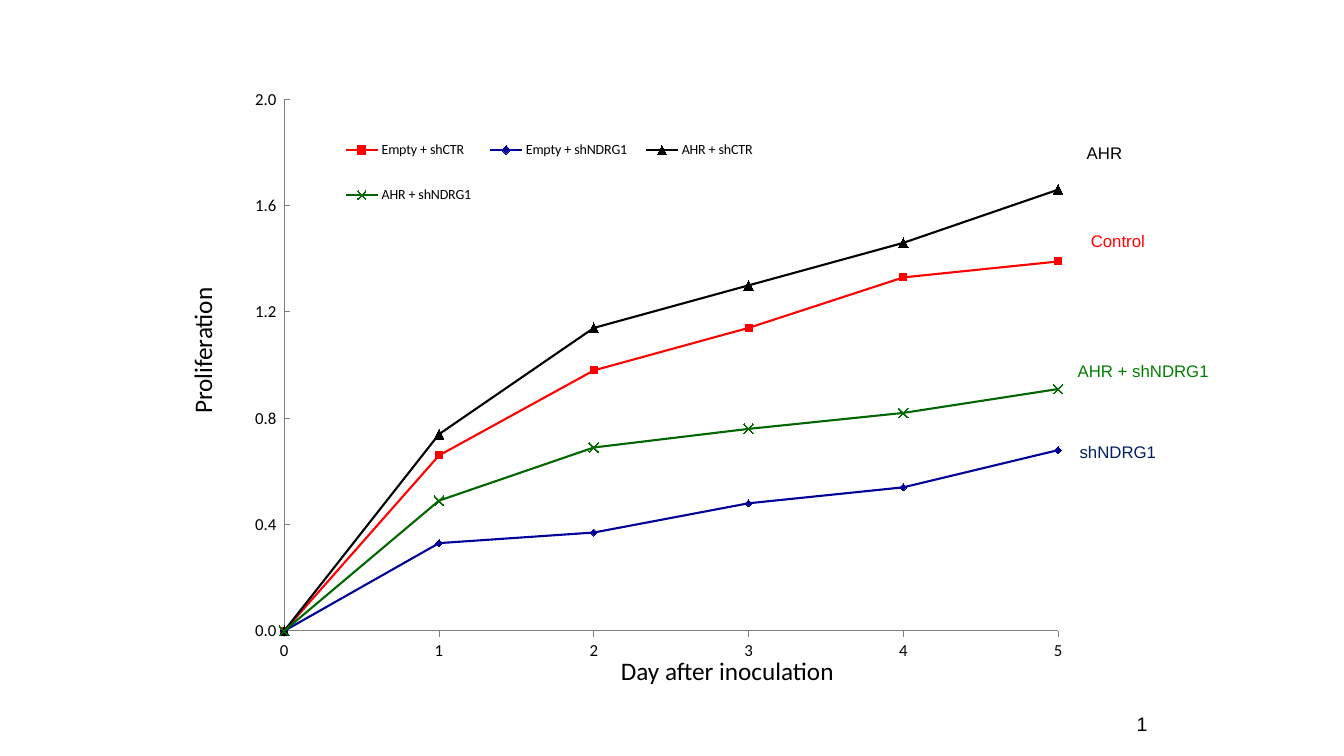
from dataclasses import dataclass

from pptx import Presentation
from pptx.chart.chart import Chart
from pptx.chart.data import CategoryChartData
from pptx.dml.color import RGBColor
from pptx.enum.chart import (XL_CHART_TYPE, XL_LEGEND_POSITION,
                             XL_MARKER_STYLE, XL_TICK_MARK)
from pptx.enum.text import MSO_ANCHOR, MSO_AUTO_SIZE, PP_ALIGN
from pptx.oxml import parse_xml
from pptx.oxml.ns import nsdecls, qn
from pptx.util import Inches, Pt

BLACK = RGBColor(0x00, 0x00, 0x00)
RED = RGBColor(0xFF, 0x00, 0x00)
BLUE = RGBColor(0x00, 0x00, 0x99)
NAVY = RGBColor(0x00, 0x20, 0x60)
DARK_GREEN = RGBColor(0x00, 0x66, 0x00)
GREEN = RGBColor(0x00, 0x80, 0x00)
GRAY = RGBColor(0x80, 0x80, 0x80)


@dataclass
class Curve:
    name: str
    values: tuple[float, ...]
    color: RGBColor
    marker: XL_MARKER_STYLE
    marker_size: int


@dataclass
class Label:
    text: str
    left: float
    top: float
    width: float
    height: float = 0.3
    size: int = 12
    color: RGBColor = BLACK
    font: str = "Arial"
    rotation: int = 0
    align: PP_ALIGN = PP_ALIGN.LEFT
    anchor: MSO_ANCHOR = MSO_ANCHOR.TOP
    fit: MSO_AUTO_SIZE = MSO_AUTO_SIZE.SHAPE_TO_FIT_TEXT


DAYS = [str(day) for day in range(6)]
CURVES = [
    Curve("Empty + shCTR", (0, 0.66, 0.98, 1.14, 1.33, 1.39), RED,
          XL_MARKER_STYLE.SQUARE, 5),
    Curve("Empty + shNDRG1", (0, 0.33, 0.37, 0.48, 0.54, 0.68), BLUE,
          XL_MARKER_STYLE.DIAMOND, 5),
    Curve("AHR + shCTR", (0, 0.74, 1.14, 1.3, 1.46, 1.66), BLACK,
          XL_MARKER_STYLE.TRIANGLE, 7),
    Curve("AHR + shNDRG1", (0, 0.49, 0.69, 0.76, 0.82, 0.91), DARK_GREEN,
          XL_MARKER_STYLE.X, 7),
]
LABELS = [
    Label("Proliferation", 0.73, 2.73, 2.55, 0.4, 18, font="Calibri", rotation=270),
    Label("Day after inoculation", 6.06, 6.45, 4.36, 0.4, 18, font="Calibri"),
    Label("shNDRG1", 10.61, 4.33, 1.76, color=NAVY),
    Label("AHR", 10.68, 1.37, 1.01),
    Label("AHR + shNDRG1", 10.59, 3.53, 2.75, color=GREEN),
    Label("Control", 10.72, 2.24, 1.35, color=RED),
    Label("1", 9.15, 6.98, 2.33, 0.4, 14, align=PP_ALIGN.RIGHT,
          anchor=MSO_ANCHOR.MIDDLE, fit=MSO_AUTO_SIZE.NONE),
]


def set_layout(parent, index: int, x: float, y: float, w: float, h: float,
               inner: bool = False) -> None:
    """Place a chart part by fractions of the chart's size."""
    for old in parent.findall(qn("c:layout")):
        parent.remove(old)
    target = '<c:layoutTarget val="inner"/>' if inner else ""
    parent.insert(index, parse_xml(
        f'<c:layout {nsdecls("c")}><c:manualLayout>{target}'
        '<c:xMode val="edge"/><c:yMode val="edge"/>'
        f'<c:x val="{x}"/><c:y val="{y}"/><c:w val="{w}"/><c:h val="{h}"/>'
        '</c:manualLayout></c:layout>'))


def format_axes(chart: Chart) -> None:
    days, growth = chart.category_axis, chart.value_axis
    for axis, tick in ((days, XL_TICK_MARK.OUTSIDE), (growth, XL_TICK_MARK.INSIDE)):
        axis.has_major_gridlines = False
        axis.major_tick_mark = tick
        axis.minor_tick_mark = XL_TICK_MARK.NONE
        axis.tick_labels.font.size = Pt(12)
        axis.format.line.color.rgb = GRAY
        axis.format.line.width = Pt(0.75)
    growth.minimum_scale = 0
    growth.maximum_scale = 2
    growth.major_unit = 0.4
    growth.tick_labels.number_format = r"#,##0.0_);[Red]\(#,##0.0\)"
    growth.tick_labels.number_format_is_linked = False
    # Day 0 sits on the value axis
    for old in growth._element.findall(qn("c:crossBetween")):
        growth._element.remove(old)
    growth._element.find(qn("c:majorUnit")).addprevious(
        parse_xml(f'<c:crossBetween {nsdecls("c")} val="midCat"/>'))


def add_growth_chart(s) -> None:
    data = CategoryChartData()
    data.categories = DAYS
    for curve in CURVES:
        data.add_series(curve.name, curve.values)
    chart = s.shapes.add_chart(
        XL_CHART_TYPE.LINE_MARKERS, Inches(0.08), Inches(0.59),
        Inches(12.34), Inches(6.6), data).chart
    chart.has_title = False
    chart.font.name = "Calibri"
    chart.font.size = Pt(10)
    chart.font.color.rgb = BLACK
    chart.plots[0].vary_by_categories = False
    format_axes(chart)

    # Curves
    for curve, series in zip(CURVES, chart.plots[0].series):
        series.smooth = False
        series.format.line.color.rgb = curve.color
        series.format.line.width = Pt(1.5)
        marker = series.marker
        marker.style = curve.marker
        marker.size = curve.marker_size
        marker.format.line.color.rgb = curve.color
        if curve.marker == XL_MARKER_STYLE.X:
            marker.format.fill.background()
        else:
            marker.format.fill.solid()
            marker.format.fill.fore_color.rgb = curve.color

    # Legend and plot area
    chart.has_legend = True
    legend = chart.legend
    legend.position = XL_LEGEND_POSITION.RIGHT
    legend.include_in_layout = False
    set_layout(legend._element, 1, 0.26, 0.08, 0.35, 0.18)
    plot_area = chart._chartSpace.find(f'{qn("c:chart")}/{qn("c:plotArea")}')
    set_layout(plot_area, 0, 0.222, 0.06, 0.622, 0.799, inner=True)


def add_label(s, label: Label) -> None:
    sp = s.shapes.add_textbox(Inches(label.left), Inches(label.top),
                              Inches(label.width), Inches(label.height))
    sp.rotation = label.rotation
    tf = sp.text_frame
    tf.word_wrap = True
    tf.auto_size = label.fit
    tf.vertical_anchor = label.anchor
    p = tf.paragraphs[0]
    p.alignment = label.align
    r = p.add_run()
    r.text = label.text
    r.font.name = label.font
    r.font.size = Pt(label.size)
    r.font.color.rgb = label.color


def main() -> None:
    prs = Presentation()
    prs.slide_width = Inches(13.33)
    prs.slide_height = Inches(7.5)
    s = prs.slides.add_slide(prs.slide_layouts[6])
    add_growth_chart(s)
    # Axis titles, curve names and page number
    for label in LABELS:
        add_label(s, label)
    prs.save("out.pptx")


if __name__ == "__main__":
    main()
